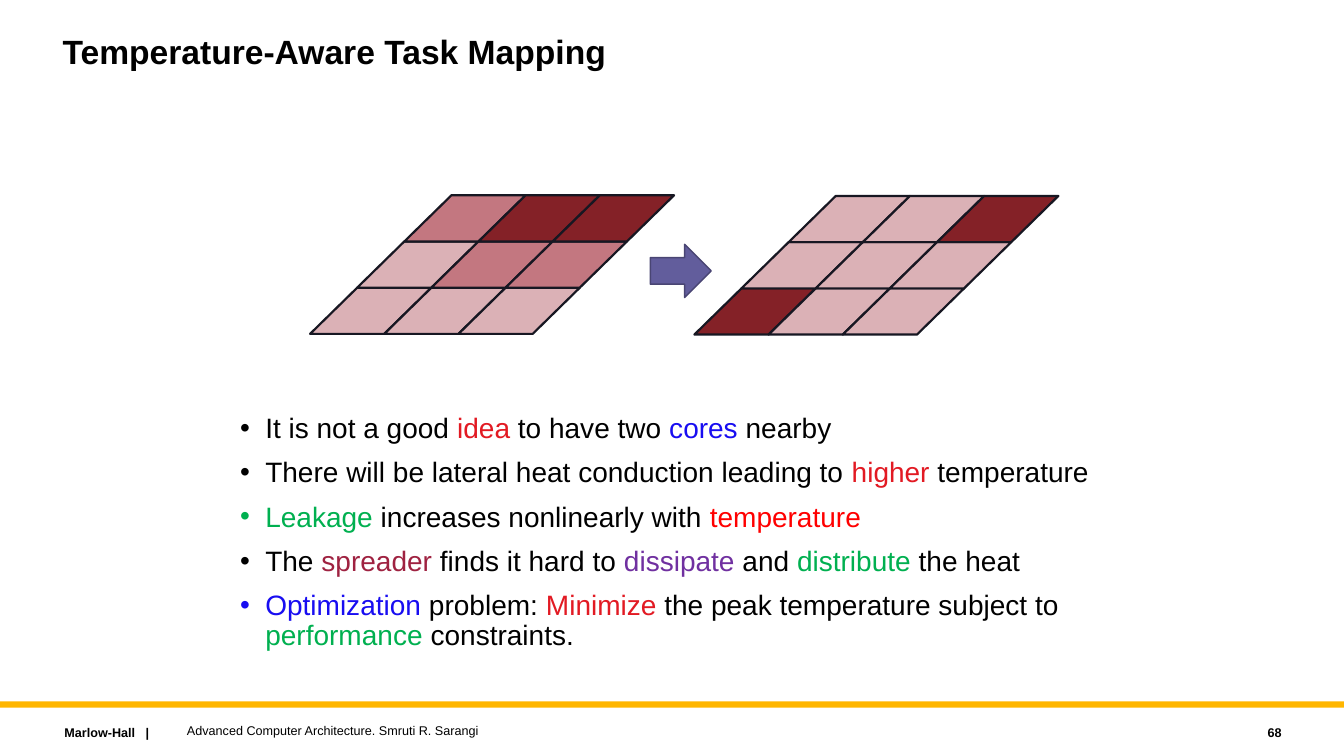
from lxml import etree
from pptx import Presentation
from pptx import util as u
from pptx.dml.color import RGBColor
from pptx.enum import shapes, text
from pptx.oxml import ns

Pt = u.Pt
BLACK = RGBColor(0x00, 0x00, 0x00)
AMBER = RGBColor(0xFF, 0xB6, 0x00)
RED = RGBColor(0xE2, 0x1A, 0x23)
BRIGHT_RED = RGBColor(0xFF, 0x00, 0x00)
BLUE = RGBColor(0x18, 0x0D, 0xF1)
GREEN = RGBColor(0x00, 0xB0, 0x50)
MAROON = RGBColor(0x9F, 0x22, 0x41)
PURPLE = RGBColor(0x70, 0x30, 0xA0)
ARROW_FILL = RGBColor(0x62, 0x5D, 0x9C)
ARROW_LINE = RGBColor(0x49, 0x45, 0x73)
CELL_LINE = RGBColor(0x17, 0x17, 0x22)
HEAT = {
    "cool": RGBColor(0xDB, 0xB1, 0xB6),
    "warm": RGBColor(0xC3, 0x77, 0x80),
    "hot": RGBColor(0x84, 0x21, 0x27),
}
SKEW = 1.02

CLUSTERED = [
    ["warm", "hot", "hot"],
    ["cool", "warm", "warm"],
    ["cool", "cool", "cool"],
]
SPREAD = [
    ["cool", "cool", "hot"],
    ["cool", "cool", "cool"],
    ["hot", "cool", "cool"],
]
POINTS = [
    [("It is not a good ", BLACK), ("idea", RED), (" to have two ", BLACK),
     ("cores", BLUE), (" nearby", BLACK)],
    [("There will be lateral heat conduction leading to ", BLACK),
     ("higher", RED), (" temperature", BLACK)],
    [("Leakage", GREEN), (" increases nonlinearly with ", BLACK),
     ("temperature", BRIGHT_RED)],
    [("The ", BLACK), ("spreader", MAROON), (" finds it hard to ", BLACK),
     ("dissipate", PURPLE), (" and ", BLACK), ("distribute", GREEN),
     (" the heat", BLACK)],
    [("Optimization", BLUE), (" problem: ", BLACK), ("Minimize", RED),
     (" the peak temperature subject to ", BLACK), ("performance", GREEN),
     (" constraints.", BLACK)],
]


def style_run(r, size, color=BLACK, bold=False):
    """Give a run its Arial size, colour and weight."""
    r.font.name = "Arial"
    r.font.size = Pt(size)
    r.font.bold = bold
    r.font.color.rgb = color


def paint(sp, fill, line=None, width=1):
    """Set a shape's fill and outline and drop its shadow."""
    sp.shadow.inherit = False
    sp.fill.solid()
    sp.fill.fore_color.rgb = fill
    if line is None:
        sp.line.fill.background()
    else:
        sp.line.color.rgb = line
        sp.line.width = Pt(width)


def add_title(s, wording, left, top, width, height):
    """Move and format the title placeholder."""
    sp = s.shapes.title
    sp.left, sp.top, sp.width, sp.height = map(Pt, (left, top, width, height))
    tf = sp.text_frame
    tf.text = wording
    tf.word_wrap = True
    tf.vertical_anchor = text.MSO_ANCHOR.TOP
    p = tf.paragraphs[0]
    p.alignment = text.PP_ALIGN.LEFT
    p.line_spacing = 0.9
    style_run(p.runs[0], 24, bold=True)


def add_core_grid(s, heats, left, top, width, height):
    """Draw a slanted grid of cores coloured by heat."""
    cell_h = height / len(heats)
    slant = cell_h * SKEW
    cell_w = (width - height * SKEW) / len(heats[0])
    for row in reversed(range(len(heats))):
        y = top + row * cell_h
        for col, heat in enumerate(heats[row]):
            x = left + (len(heats) - 1 - row) * slant + col * cell_w
            corners = [(x + slant, y), (x + slant + cell_w, y),
                       (x + cell_w, y + cell_h), (x, y + cell_h)]
            corners = [(Pt(cx), Pt(cy)) for cx, cy in corners]
            outline = s.shapes.build_freeform(*corners[0])
            outline.add_line_segments(corners[1:], close=True)
            paint(outline.convert_to_shape(), HEAT[heat], CELL_LINE, 1.55)


def add_mapping(s, left, top, width, height):
    """Draw both core grids with an arrow between them."""
    grid_w = 260
    add_core_grid(s, CLUSTERED, left, top, grid_w, height)
    add_core_grid(s, SPREAD, left + width - grid_w, top + 0.5, grid_w, height)
    arrow = s.shapes.add_shape(shapes.MSO_SHAPE.RIGHT_ARROW, Pt(left + 243),
                               Pt(top + 35), Pt(43.5), Pt(38))
    paint(arrow, ARROW_FILL, ARROW_LINE)


def add_bullets(s, points, left, top, width, height):
    """Write the bulleted points with coloured keywords."""
    sp = s.shapes.add_textbox(*map(Pt, (left, top, width, height)))
    tf = sp.text_frame
    tf.word_wrap = True
    tf.margin_left = tf.margin_right = Pt(5)
    tf.margin_top = tf.margin_bottom = Pt(3)
    for i, point in enumerate(points):
        p = tf.add_paragraph() if i else tf.paragraphs[0]
        props = p._p.get_or_add_pPr()
        props.set("marL", str(Pt(18)))
        props.set("indent", str(-Pt(18)))
        etree.SubElement(props, ns.qn("a:buFont"), typeface="Arial")
        etree.SubElement(props, ns.qn("a:buChar"), char="•")
        p.line_spacing = 0.9
        if i:
            p.space_before = Pt(10)
        for wording, color in point:
            r = p.add_run()
            r.text = wording
            style_run(r, 20, color)


def add_footer(s, left, top, width, height):
    """Draw the amber rule and the three footer texts."""
    rule = s.shapes.add_shape(shapes.MSO_SHAPE.RECTANGLE,
                              *map(Pt, (left, top, width, 4.5)))
    paint(rule, AMBER)
    entries = [
        ("Marlow-Hall   |", 39, 13, 163, True, text.PP_ALIGN.LEFT),
        ("Advanced Computer Architecture. Smruti R. Sarangi",
         126.5, 11.5, 576, False, text.PP_ALIGN.LEFT),
        ("68", 821.5, 13, 101, True, text.PP_ALIGN.RIGHT),
    ]
    for wording, dx, dy, w, bold, align in entries:
        sp = s.shapes.add_textbox(Pt(left + dx), Pt(top + dy), Pt(w),
                                  Pt(height - 21))
        tf = sp.text_frame
        tf.text = wording
        tf.word_wrap = True
        tf.vertical_anchor = text.MSO_ANCHOR.MIDDLE
        p = tf.paragraphs[0]
        p.alignment = align
        style_run(p.runs[0], 9, bold=bold)


def main():
    """Build the slide and save it."""
    prs = Presentation()
    prs.slide_width, prs.slide_height = Pt(960), Pt(540)
    s = prs.slides.add_slide(prs.slide_layouts[5])
    add_footer(s, 0, 501, 960, 39)
    add_title(s, "Temperature-Aware Task Mapping", 37.5, 21.5, 720, 65)
    add_mapping(s, 221.5, 139.5, 534.5, 99)
    add_bullets(s, POINTS, 166.5, 293, 674, 178.5)
    prs.save("out.pptx")


if __name__ == "__main__":
    main()
